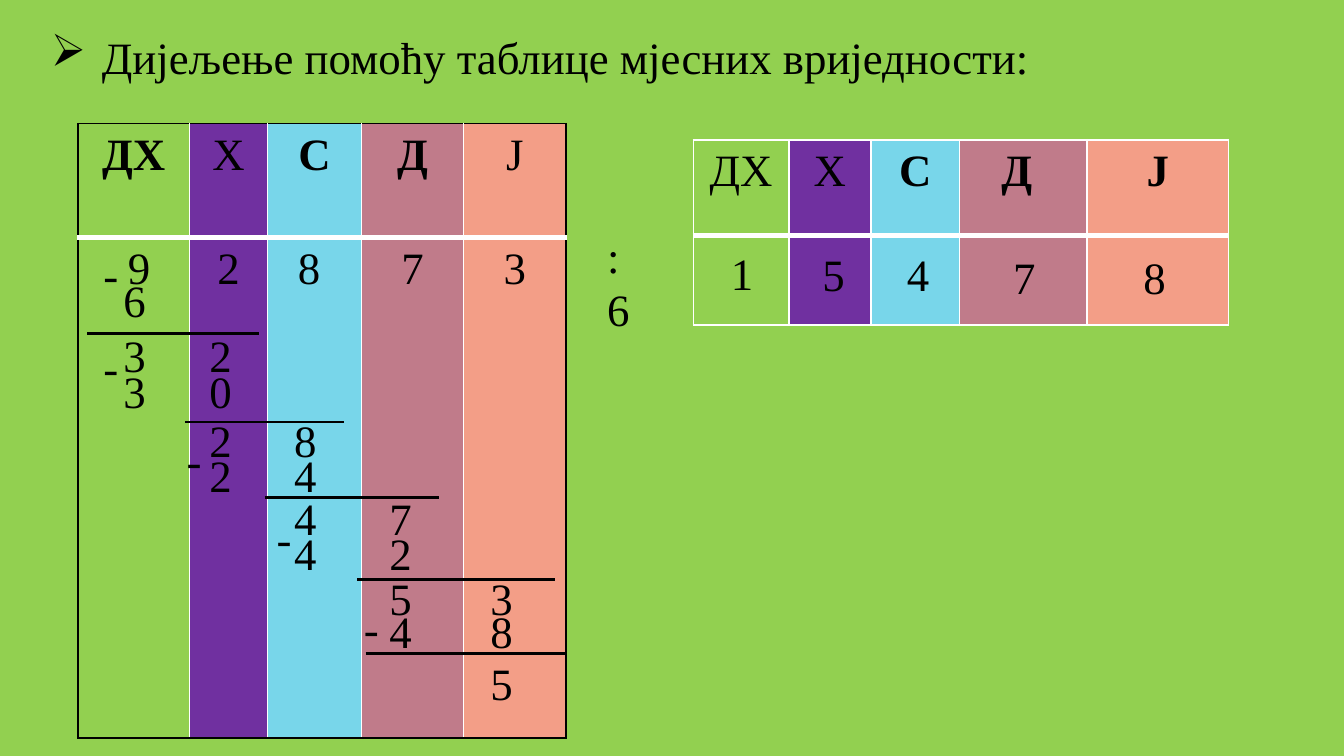
from lxml.etree import SubElement
from pptx import Presentation
from pptx.dml.color import RGBColor
from pptx.enum.shapes import MSO_CONNECTOR
from pptx.enum.text import MSO_ANCHOR, PP_ALIGN
from pptx.oxml import parse_xml
from pptx.oxml.ns import nsdecls, qn
from pptx.util import Inches, Pt

THEME = {
    "background": "92D050",
    "places": ["92D050", "7030A0", "78D6EA", "C07B8A", "F39E87"],
    "ink": "000000",
    "grid": "FFFFFF",
    "font": "Times New Roman",
    "size": Pt(24),
    "rule": Pt(1.5),
}

presentation = Presentation()
presentation.slide_width, presentation.slide_height = Inches(10), Inches(5.625)
UNIT = presentation.slide_width / 100  # one grid step is a hundredth of the width
slide = presentation.slides.add_slide(presentation.slide_layouts[6])
slide.background.fill.solid()
slide.background.fill.fore_color.rgb = RGBColor.from_string(THEME["background"])


def style(paragraph, bold=False):
    for run in paragraph.runs:
        run.font.name = THEME["font"]
        run.font.size = THEME["size"]
        run.font.bold = bold
        run.font.color.rgb = RGBColor.from_string(THEME["ink"])


def add_text(text, left, top, width=3.7, height=5):
    box = slide.shapes.add_textbox(*(round(v * UNIT) for v in (left, top, width, height)))
    box.text_frame.word_wrap = False
    box.text_frame.text = text
    style(box.text_frame.paragraphs[0])
    return box.text_frame


# Heading with an arrow bullet
heading = add_text("Дијељење помоћу таблице мјесних вриједности:", 2.8, 1.7, 96.1, 6)
heading.word_wrap = True
properties = heading.paragraphs[0]._p.get_or_add_pPr()
properties.set("marL", str(Inches(0.38)))
properties.set("indent", str(-Inches(0.38)))
SubElement(properties, qn("a:buChar")).set("char", "➢")

# Place-value tables: dividend on the left, quotient on the right
tables = [
    {"at": (5.8, 9.2), "columns": [8.3, 5.8, 7, 7.6, 7.6], "rows": [8.5, 37.2],
     "text": ["ДХХСДЈ", "92873"], "bold": "ДХ СД", "frame": THEME["ink"],
     "shift": {(1, 0): 0.4, (1, 2): -0.4}},
    {"at": (51.6, 10.4), "columns": [7.1, 6.1, 6.6, 9.5, 10.5], "rows": [7.1, 6.7],
     "text": ["ДХХСДЈ", ""], "bold": "СДЈ", "frame": THEME["grid"],
     "shift": {(0, 3): -0.5}},
]
for data in tables:
    size = sum(data["columns"]), sum(data["rows"])
    graphic = slide.shapes.add_table(2, 5, *(round(v * UNIT) for v in data["at"] + size))
    table = graphic.table
    for column, width in zip(table.columns, data["columns"]):
        column.width = round(width * UNIT)
    for row, height in zip(table.rows, data["rows"]):
        row.height = round(height * UNIT)
    for r, text in enumerate(data["text"]):
        # The first heading has two letters, every other entry has one
        entries = [text[:2], *text[2:]] if r == 0 else list(text.ljust(5))
        for c, entry in enumerate(entries):
            cell = table.cell(r, c)
            cell.fill.solid()
            cell.fill.fore_color.rgb = RGBColor.from_string(THEME["places"][c])
            cell.text = entry.strip()
            paragraph = cell.text_frame.paragraphs[0]
            paragraph.alignment = PP_ALIGN.CENTER
            paragraph.font.size = THEME["size"]
            style(paragraph, r == 0 and entry in data["bold"] and entry != "Х")
            shift = data["shift"].get((r, c), 0)
            cell.margin_left = round((1 + max(0, 2 * shift)) * UNIT)
            cell.margin_right = round((1 + max(0, -2 * shift)) * UNIT)
            # Outer edges take the frame colour; a heavy line is under the header
            edges = [("lnL", c == 0, 1), ("lnR", c == 4, 1),
                     ("lnT", r == 0, 1 if r == 0 else 3),
                     ("lnB", r == 1, 3 if r == 0 else 1)]
            for index, (tag, outer, weight) in enumerate(edges):
                color = data["frame"] if outer else THEME["grid"]
                cell._tc.get_or_add_tcPr().insert(index, parse_xml(
                    f'<a:{tag} {nsdecls("a")} w="{Pt(weight)}"><a:solidFill>'
                    f'<a:srgbClr val="{color}"/></a:solidFill></a:{tag}>'))
# The first heading of the dividend table is the one bold two-letter entry
style(slide.shapes[1].table.cell(0, 0).text_frame.paragraphs[0], True)

# Divisor
add_text(": 6", 44.2, 16.5, 5)

# Working digits: top, first column, digits in neighbouring columns
digit_columns = [8.2, 14.6, 20.9, 28, 35.5]
working = [
    (19.8, 0, "6"), (23.9, 0, "32"), (26.6, 0, "30"), (30.2, 1, "28"),
    (32.8, 1, "24"), (36, 2, "47"), (38.6, 2, "42"), (42, 3, "53"),
    (44.4, 3, "48"), (48.3, 4, "5"),
]
for top, first, digits in working:
    for left, digit in zip(digit_columns[first:], digits):
        add_text(digit, left, top)

# Minus signs
for left, top in [(6.7, 17.9), (6.7, 24.8), (12.9, 31.7), (19.6, 37.5), (26.1, 44.2)]:
    add_text("-", left, top, 3.1)

# Quotient digits
for digit, left, top in zip("15478", [53.4, 60.2, 66.5, 74.4, 84.1],
                            [17.8, 17.9, 17.9, 18.1, 18.1]):
    add_text(digit, left, top)

# Subtraction lines
for start, end, y in [(6.5, 19.3, 24.8), (13.8, 25.6, 31.4), (19.7, 32.7, 37),
                      (26.6, 41.3, 43.1), (27.2, 42.1, 48.6)]:
    line = slide.shapes.add_connector(
        MSO_CONNECTOR.STRAIGHT, *(round(v * UNIT) for v in (start, y, end, y)))
    line.line.color.rgb = RGBColor.from_string(THEME["ink"])
    line.line.width = THEME["rule"]
    SubElement(line._element.spPr, qn("a:effectLst"))

presentation.save("out.pptx")
